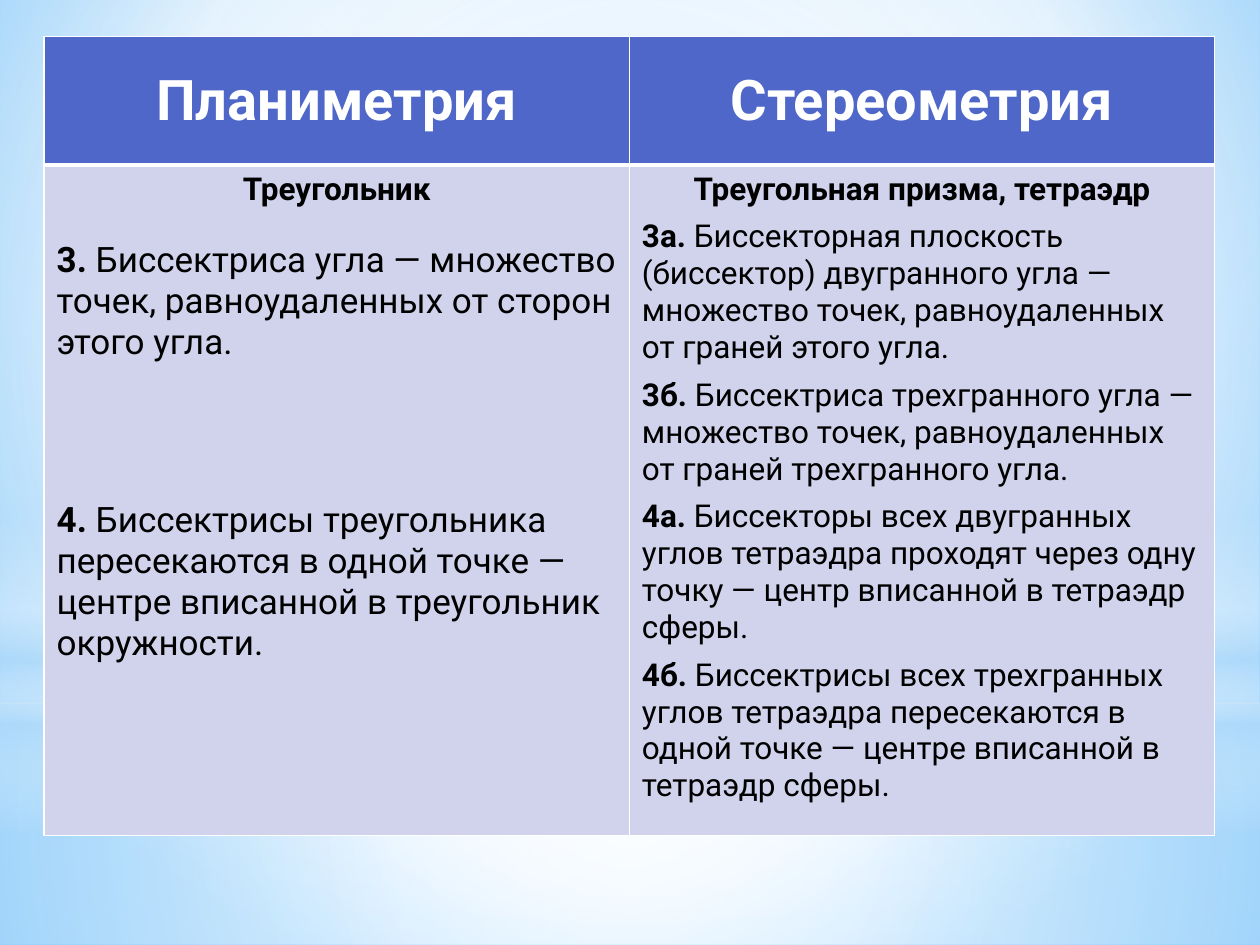
from dataclasses import dataclass

from lxml import etree
from pptx import Presentation
from pptx.dml.color import RGBColor
from pptx.enum.shapes import MSO_SHAPE
from pptx.enum.text import MSO_ANCHOR, PP_ALIGN
from pptx.oxml.ns import qn
from pptx.util import Inches, Pt

RECTANGLE, OVAL = MSO_SHAPE.RECTANGLE, MSO_SHAPE.OVAL
CENTER, LEFT = PP_ALIGN.CENTER, PP_ALIGN.LEFT
MIDDLE = MSO_ANCHOR.MIDDLE


@dataclass(frozen=True)
class Theme:
    font: str = "Roboto"
    white: str = "FFFFFF"
    black: str = "000000"
    header: str = "4E67C8"
    body: str = "D0D3EB"
    sky: str = "B4DCFA"
    sky_center: str = "9ED5FF"
    sky_edge: str = "5BB9FF"
    header_size: int = 32
    right_size: int = 18
    left_size: int = 20
    border: int = 1
    header_border: int = 3


THEME = Theme()
MIDPOINT = (50, 50, 50, 50)

# Stops are (position %, colour, opacity %).
BACKGROUND_STOPS = [(0, THEME.sky_center, 100), (60, THEME.white, 100), (100, THEME.sky_edge, 100)]
# Layers are (preset, top, height, stops, focus); a focus of None means a vertical gradient.
SKY_LAYERS = [
    (RECTANGLE, 5.58, 1.92,
     [(0, THEME.white, 91), (37, THEME.white, 76), (100, THEME.sky, 79)], MIDPOINT),
    (RECTANGLE, 0, 5.58,
     [(0, THEME.white, 89), (48, THEME.white, 62), (100, THEME.sky, 79)], MIDPOINT),
    (RECTANGLE, 4.12, 2.5,
     [(0, THEME.white, 0), (29, THEME.white, 30), (45, THEME.sky, 40),
      (55, THEME.white, 26), (65, THEME.sky, 60), (100, THEME.white, 0)], None),
    (OVAL, 1.75, 5.58, [(0, THEME.white, 100), (56, THEME.white, 0)], MIDPOINT),
]

HEADERS = ["Планиметрия", "Стереометрия"]
# Statements are (number, text, space before in points).
PLANE = [
    ("3.", " Биссектриса угла ― множество точек, равноудаленных от сторон этого угла.", 0),
    ("4.", " Биссектрисы треугольника пересекаются в одной точке ― "
           "центре вписанной в треугольник окружности.", 66),
]
SOLID = [
    ("3а.", " Биссекторная плоскость (биссектор) двугранного угла ― "
            "множество точек, равноудаленных от граней этого угла.", 0),
    ("3б.", " Биссектриса трехгранного угла ― "
            "множество точек, равноудаленных от граней трехгранного угла.", 0),
    ("4а.", " Биссекторы всех двугранных углов тетраэдра проходят через одну точку ― "
            "центр вписанной в тетраэдр сферы.", 0),
    ("4б.", " Биссектрисы всех трехгранных углов тетраэдра пересекаются в одной точке ― "
            "центре вписанной в тетраэдр сферы.", 0),
]


def set_gradient(fill, element, stops, focus):
    """Fill with a gradient: circular around focus, or vertical without one."""
    fill.solid()
    solid = element.find(".//" + qn("a:solidFill"))
    gradient = etree.Element(qn("a:gradFill"), rotWithShape="1")
    stop_list = etree.SubElement(gradient, qn("a:gsLst"))
    for position, color, opacity in stops:
        stop = etree.SubElement(stop_list, qn("a:gs"), pos=str(position * 1000))
        color_element = etree.SubElement(stop, qn("a:srgbClr"), val=color)
        etree.SubElement(color_element, qn("a:alpha"), val=str(opacity * 1000))
    if focus:
        circle = etree.SubElement(gradient, qn("a:path"), path="circle")
        sides = {side: str(share * 1000) for side, share in zip("ltrb", focus)}
        etree.SubElement(circle, qn("a:fillToRect"), sides)
    else:
        etree.SubElement(gradient, qn("a:lin"), ang="5400000", scaled="0")
    solid.getparent().replace(solid, gradient)


def add_sky(slide, width):
    set_gradient(slide.background.fill, slide.element, BACKGROUND_STOPS, (20, 10, 20, 60))
    for preset, top, height, stops, focus in SKY_LAYERS:
        shape = slide.shapes.add_shape(preset, 0, Inches(top), width, Inches(height))
        shape.shadow.inherit = False
        shape.line.fill.background()
        set_gradient(shape.fill, shape.element, stops, focus)


def style_cell(cell, color, bottom_border):
    properties = cell._tc.get_or_add_tcPr()
    for side in "LRTB":
        points = bottom_border if side == "B" else THEME.border
        line = etree.SubElement(properties, qn("a:ln" + side), w=str(Pt(points)))
        line_fill = etree.SubElement(line, qn("a:solidFill"))
        etree.SubElement(line_fill, qn("a:srgbClr"), val=THEME.white)
    cell.fill.solid()
    cell.fill.fore_color.rgb = RGBColor.from_string(color)


def style_paragraph(paragraph, size, color, alignment, space_after=0, space_before=0):
    paragraph.alignment = alignment
    paragraph.space_before = Pt(space_before)
    paragraph.space_after = Pt(space_after)
    paragraph.font.name = THEME.font
    paragraph.font.size = Pt(size)
    paragraph.font.color.rgb = RGBColor.from_string(color)


def add_run(paragraph, text, bold):
    run = paragraph.add_run()
    run.text = text
    run.font.bold = bold


def fill_header(cell, text):
    style_cell(cell, THEME.header, THEME.header_border)
    cell.vertical_anchor = MIDDLE
    paragraph = cell.text_frame.paragraphs[0]
    style_paragraph(paragraph, THEME.header_size, THEME.white, CENTER)
    add_run(paragraph, text, True)


def fill_statements(cell, title, title_gap, statements, size, gap):
    style_cell(cell, THEME.body, THEME.border)
    heading = cell.text_frame.paragraphs[0]
    style_paragraph(heading, THEME.right_size, THEME.black, CENTER, title_gap)
    add_run(heading, title, True)
    for number, text, space_before in statements:
        paragraph = cell.text_frame.add_paragraph()
        style_paragraph(paragraph, size, THEME.black, LEFT, gap, space_before)
        add_run(paragraph, number, True)
        add_run(paragraph, text, False)


def add_comparison_table(slide):
    frame = slide.shapes.add_table(2, 2, Inches(0.35), Inches(0.29), Inches(9.29), Inches(6.34))
    table = frame.table
    table.rows[0].height = Inches(1.02)
    table.rows[1].height = Inches(5.32)
    for column, text in enumerate(HEADERS):
        fill_header(table.cell(0, column), text)
    fill_statements(table.cell(1, 0), "Треугольник", 18, PLANE, THEME.left_size, 12)
    fill_statements(table.cell(1, 1), "Треугольная призма, тетраэдр", 6,
                    SOLID, THEME.right_size, 6)


def main():
    presentation = Presentation()
    presentation.slide_width = Inches(10)
    presentation.slide_height = Inches(7.5)
    slide = presentation.slides.add_slide(presentation.slide_layouts[6])
    add_sky(slide, presentation.slide_width)
    add_comparison_table(slide)
    presentation.save("out.pptx")


if __name__ == "__main__":
    main()
